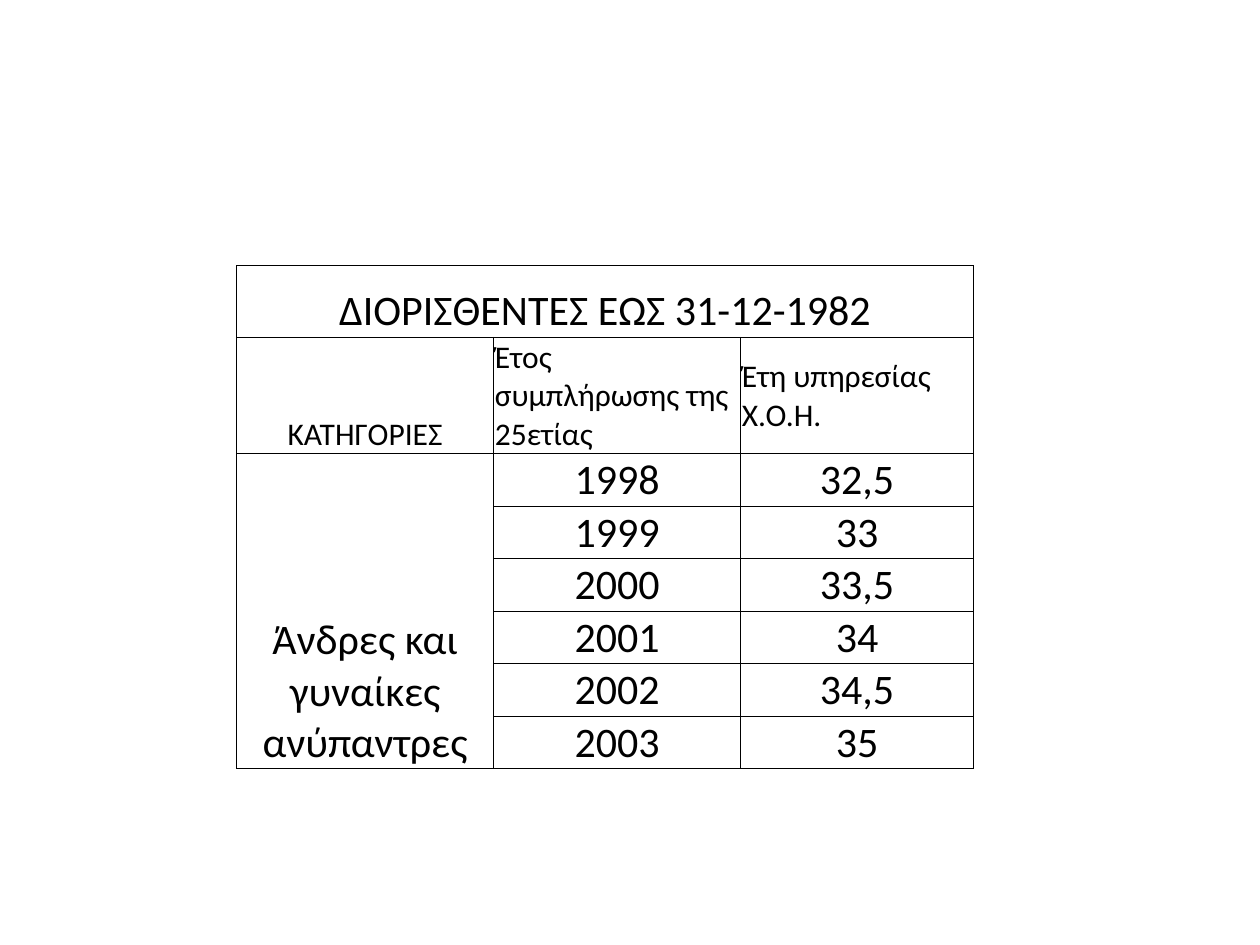
from lxml import etree
from pptx import Presentation
from pptx.dml.color import RGBColor
from pptx.enum.text import MSO_ANCHOR, PP_ALIGN
from pptx.oxml.ns import qn
from pptx.util import Pt

BOTTOM, MIDDLE = MSO_ANCHOR.BOTTOM, MSO_ANCHOR.MIDDLE
CENTER, LEFT = PP_ALIGN.CENTER, PP_ALIGN.LEFT
COLORS = {"text": "000000", "border": "000000"}
FONT = "Calibri"
COLUMN_WIDTHS = [146.9, 141.1, 133.2]
ROW_HEIGHTS = [41, 63.4] + [20.9] * 6
SERVICE_YEARS = [
    ("1998", "32,5"),
    ("1999", "33"),
    ("2000", "33,5"),
    ("2001", "34"),
    ("2002", "34,5"),
    ("2003", "35"),
]


def add_borders(cell):
    properties = cell._tc.get_or_add_tcPr()
    for side in ("lnL", "lnR", "lnT", "lnB"):
        line = etree.SubElement(properties, qn(f"a:{side}"), w=str(Pt(0.5)))
        fill = etree.SubElement(line, qn("a:solidFill"))
        etree.SubElement(fill, qn("a:srgbClr"), val=COLORS["border"])


def write_cell(row, column, text, size=24, align=CENTER, anchor=BOTTOM):
    cell = table.cell(row, column)
    cell.text = text
    cell.vertical_anchor = anchor
    paragraph = cell.text_frame.paragraphs[0]
    paragraph.alignment = align
    paragraph.font.size = Pt(size)
    paragraph.font.name = FONT
    paragraph.font.bold = False
    paragraph.font.color.rgb = RGBColor.from_string(COLORS["text"])


presentation = Presentation()
presentation.slide_width, presentation.slide_height = Pt(720), Pt(540)
slide = presentation.slides.add_slide(presentation.slide_layouts[6])

table_frame = slide.shapes.add_table(
    len(ROW_HEIGHTS), len(COLUMN_WIDTHS), Pt(135.2), Pt(151.7), Pt(421.2), Pt(283)
)
table = table_frame.table
table.first_row = False
table.horz_banding = False
for column, width in zip(table.columns, COLUMN_WIDTHS):
    column.width = Pt(width)
for row, height in zip(table.rows, ROW_HEIGHTS):
    row.height = Pt(height)

for cell in table.iter_cells():
    cell.margin_left = cell.margin_right = cell.margin_top = Pt(0.7)
    cell.margin_bottom = Pt(0)
    add_borders(cell)
    cell.fill.background()

table.cell(0, 0).merge(table.cell(0, 2))
table.cell(2, 0).merge(table.cell(7, 0))

write_cell(0, 0, "ΔΙΟΡΙΣΘΕΝΤΕΣ ΕΩΣ 31-12-1982")
write_cell(1, 0, "ΚΑΤΗΓΟΡΙΕΣ", 18)
write_cell(1, 1, "Έτος συμπλήρωσης της 25ετίας", 18, LEFT, MIDDLE)
write_cell(1, 2, "Έτη υπηρεσίας Χ.Ο.Η.", 18, LEFT, MIDDLE)
write_cell(2, 0, "Άνδρες και γυναίκες ανύπαντρες")
for row, (completion_year, service) in enumerate(SERVICE_YEARS, start=2):
    write_cell(row, 1, completion_year)
    write_cell(row, 2, service)

presentation.save("out.pptx")
